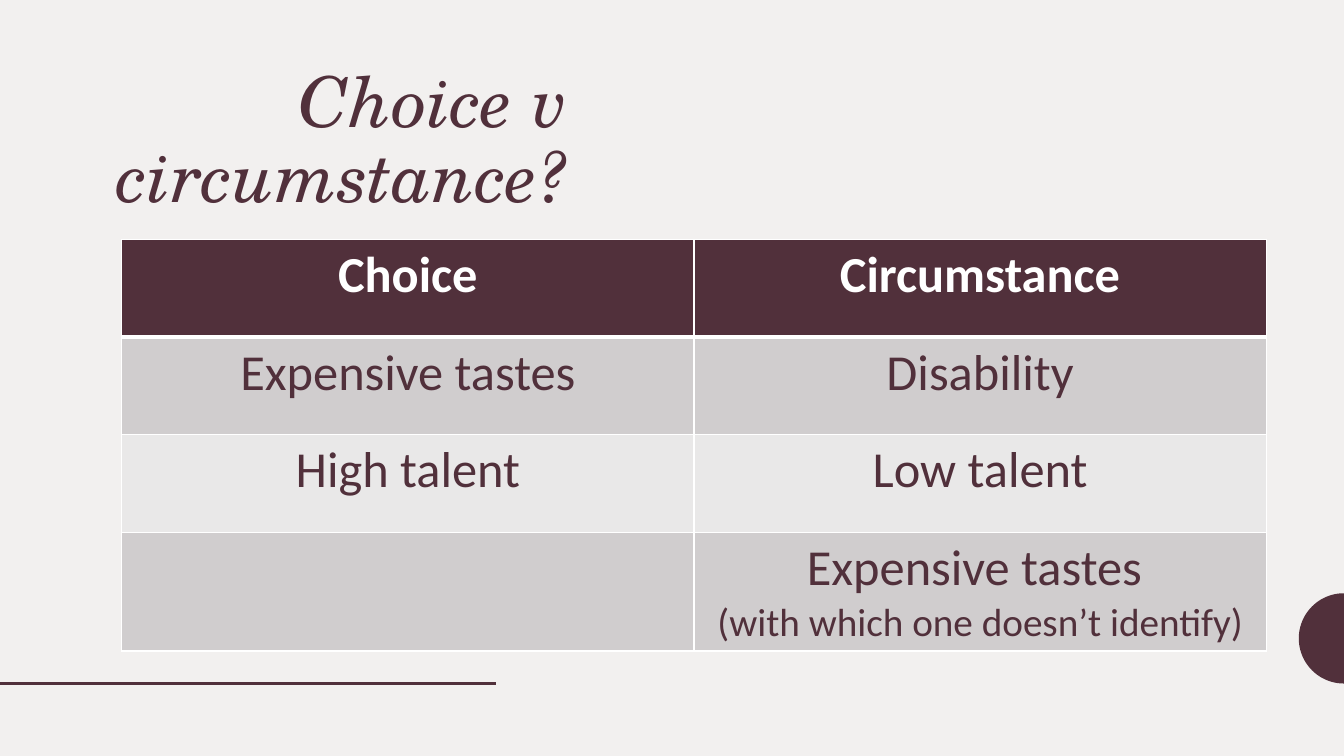
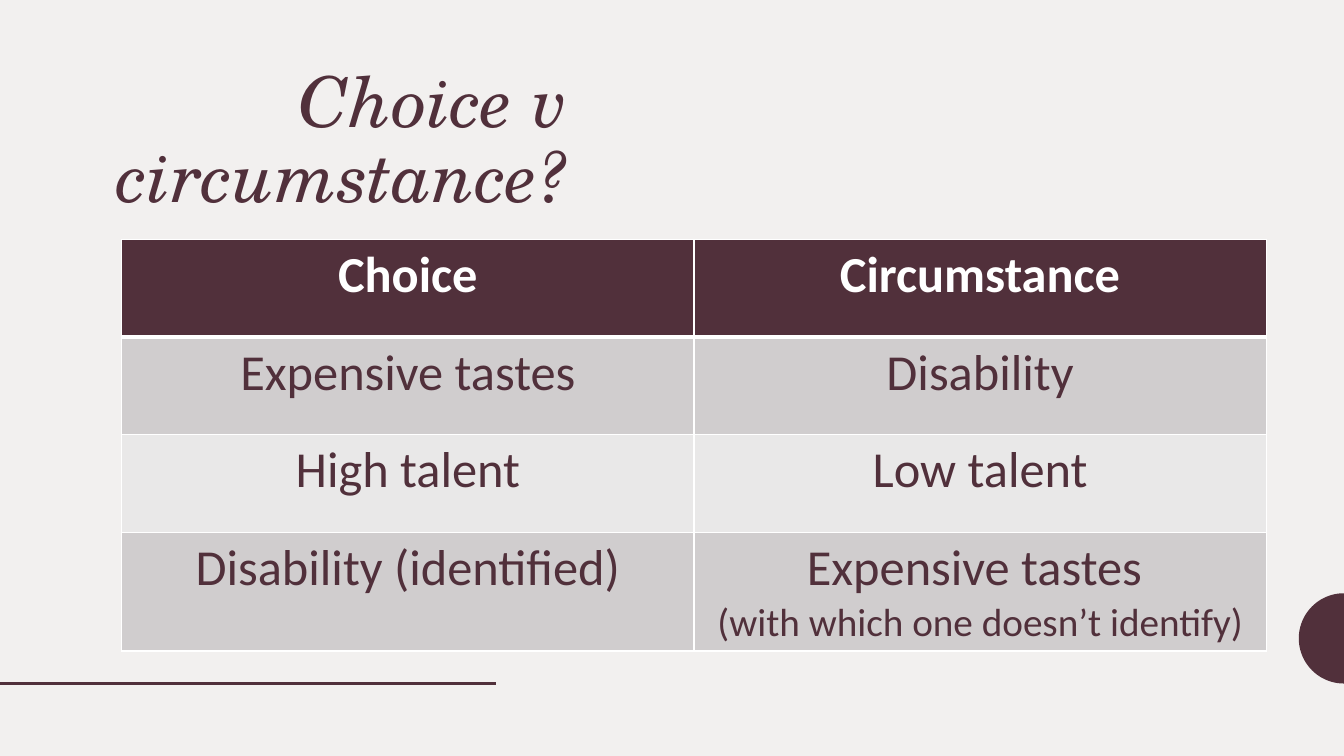
from math import cos, pi, sin

from lxml.etree import SubElement
from pptx import Presentation
from pptx.dml.color import RGBColor
from pptx.enum.shapes import MSO_CONNECTOR
from pptx.enum.text import MSO_ANCHOR, PP_ALIGN
from pptx.oxml.ns import qn
from pptx.util import Pt

PX = 9525
WIDE, HIGH = 1280, 720
PLUM, PAPER, WHITE = "51303B", "F2F0EF", "FFFFFF"
BANDS = ["D0CDCE", "E9E8E8"]
SERIF, SANS = "TeX Gyre Schola", "Calibri"

TITLE = "Choice v circumstance?"
TOP = [
    (["Choice"], ["Circumstance"]),
    (["Expensive tastes"], ["Disability"]),
    (["High talent"], ["Low talent"]),
]
LAST = ["Expensive tastes ", "(with which one doesn’t identify)"]
SLIDES = [
    TOP + [([], LAST)],
    TOP + [(["Disability (identified)"], LAST)],
]
SIZES = [36, 28]
COLS = [545, 545]
ROWS = [93, 93, 93, 113]


def color(code):
    return RGBColor.from_string(code)


def paint(fill, code):
    fill.solid()
    fill.fore_color.rgb = color(code)


def write(para, text, face, size, code, bold=False, slant=False):
    run = para.add_run()
    run.text = text
    font = run.font
    font.name, font.size = face, Pt(size)
    font.bold, font.italic = bold, slant
    font.color.rgb = color(code)


def add_title(slide):
    box = slide.shapes.add_textbox(80 * PX, 59 * PX, 471 * PX, 520 * PX)
    frame = box.text_frame
    frame.word_wrap = True
    frame.vertical_anchor = MSO_ANCHOR.TOP
    para = frame.paragraphs[0]
    para.alignment = PP_ALIGN.RIGHT
    para.line_spacing = 0.9
    write(para, TITLE, SERIF, 50, PLUM, slant=True)


def add_decor(slide):
    mid, rad, steps = 608, 43, 48
    arc = [
        (PX * (WIDE - rad * sin(pi * i / steps)),
         PX * (mid - rad * cos(pi * i / steps)))
        for i in range(steps + 1)
    ]
    path = slide.shapes.build_freeform(*arc[0])
    path.add_line_segments(arc[1:], close=True)
    half = path.convert_to_shape()
    half.shadow.inherit = False
    paint(half.fill, PLUM)
    half.line.fill.background()

    base = mid + rad
    rule = slide.shapes.add_connector(
        MSO_CONNECTOR.STRAIGHT, 0, base * PX, 472 * PX, base * PX)
    rule.line.color.rgb = color(PLUM)
    rule.line.width = Pt(2)
    SubElement(rule._element.spPr, qn("a:effectLst"))


def add_edges(cell, row):
    props = cell._tc.get_or_add_tcPr()
    widths = {"L": 1, "R": 1, "T": 3 if row == 1 else 1,
              "B": 3 if row == 0 else 1}
    for side, width in widths.items():
        edge = SubElement(props, qn("a:ln" + side), w=str(Pt(width)))
        fill = SubElement(edge, qn("a:solidFill"))
        SubElement(fill, qn("a:srgbClr"), val=WHITE)


def fill_cell(cell, lines, row):
    head = row == 0
    add_edges(cell, row)
    paint(cell.fill, PLUM if head else BANDS[(row - 1) % 2])
    frame = cell.text_frame
    for i, (text, size) in enumerate(zip(lines, SIZES)):
        para = frame.add_paragraph() if i else frame.paragraphs[0]
        para.alignment = PP_ALIGN.CENTER
        write(para, text, SANS, size, WHITE if head else PLUM, bold=head)


def add_grid(slide, data):
    grid = slide.shapes.add_table(
        len(ROWS), len(COLS), 116 * PX, 228 * PX,
        sum(COLS) * PX, sum(ROWS) * PX).table
    for col, width in zip(grid.columns, COLS):
        col.width = width * PX
    for row, height in zip(grid.rows, ROWS):
        row.height = height * PX
    for r, cells in enumerate(data):
        for c, lines in enumerate(cells):
            fill_cell(grid.cell(r, c), lines, r)


def main():
    deck = Presentation()
    deck.slide_width, deck.slide_height = WIDE * PX, HIGH * PX
    paint(deck.slide_master.background.fill, PAPER)
    for data in SLIDES:
        slide = deck.slides.add_slide(deck.slide_layouts[6])
        add_decor(slide)
        add_title(slide)
        add_grid(slide, data)
    deck.save("out.pptx")


if __name__ == "__main__":
    main()
